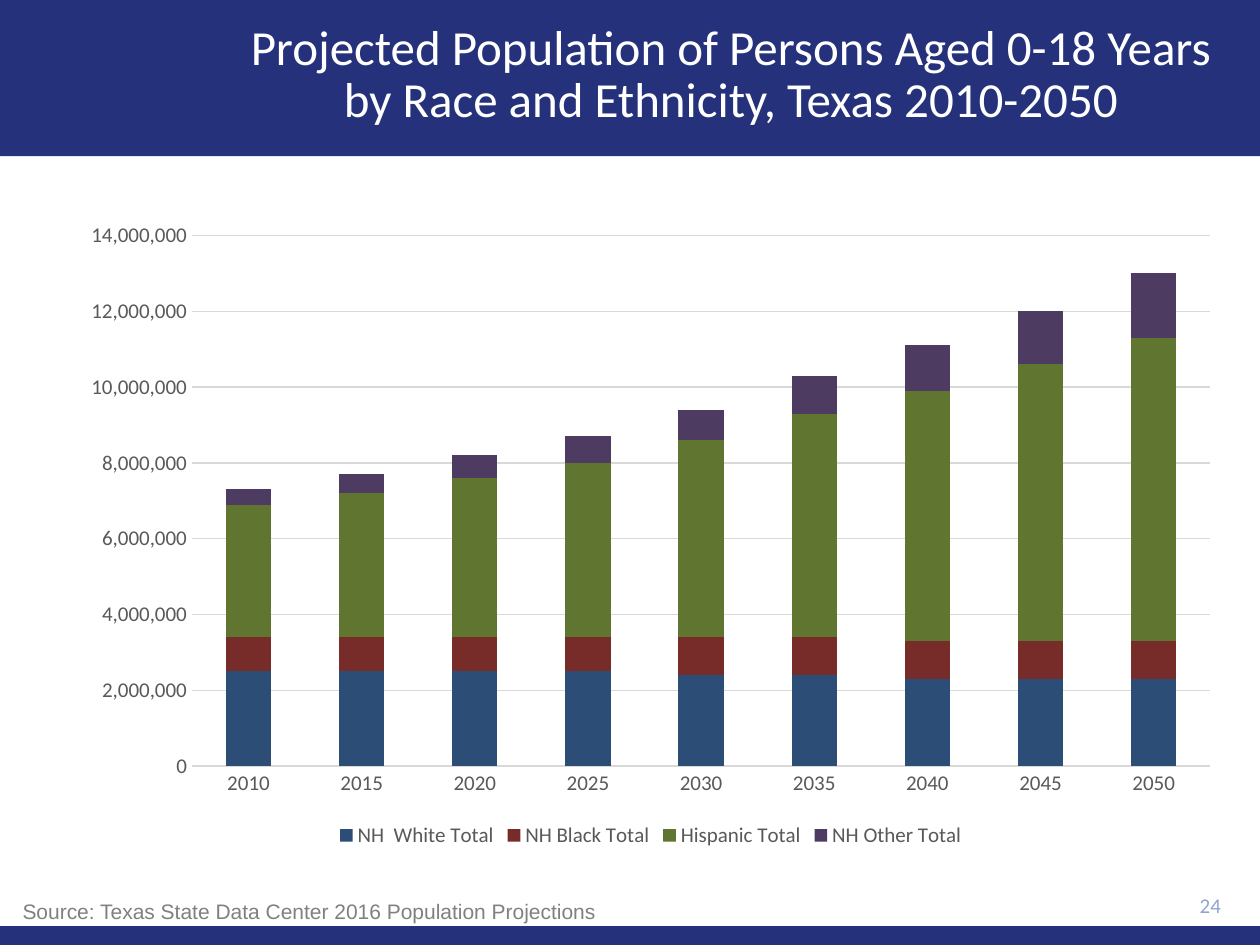
from pptx import Presentation
from pptx.chart import data as cd
from pptx.dml.color import RGBColor
from pptx.enum import chart as ch, shapes, text
from pptx.util import Pt

NAVY = RGBColor(0x25, 0x32, 0x7B)
WHITE = RGBColor(0xFF, 0xFF, 0xFF)
LABEL = RGBColor(0x59, 0x59, 0x59)
GRID = RGBColor(0xD9, 0xD9, 0xD9)
NUMBER = RGBColor(0x8F, 0xA5, 0xD1)
SOURCE = RGBColor(0x80, 0x80, 0x80)

YEARS = [str(year) for year in range(2010, 2051, 5)]
UNIT = 100_000
GROUPS = [
    ("NH  White Total", RGBColor(0x2C, 0x4D, 0x75), [25, 25, 25, 25, 24, 24, 23, 23, 23]),
    ("NH Black Total", RGBColor(0x77, 0x2C, 0x2A), [9, 9, 9, 9, 10, 10, 10, 10, 10]),
    ("Hispanic Total", RGBColor(0x5F, 0x75, 0x30), [35, 38, 42, 46, 52, 59, 66, 73, 80]),
    ("NH Other Total", RGBColor(0x4D, 0x3B, 0x62), [4, 5, 6, 7, 8, 10, 12, 14, 17]),
]


def style_font(font, size, color, name="Calibri"):
    """Set the size, colour and typeface of a font."""
    font.size, font.name = Pt(size), name
    font.color.rgb = color


def add_band(slide, left, top, width, height):
    """Draw a plain navy band."""
    band = slide.shapes.add_shape(
        shapes.MSO_SHAPE.RECTANGLE, Pt(left), Pt(top), Pt(width), Pt(height))
    band.shadow.inherit = False
    band.fill.solid()
    band.fill.fore_color.rgb = NAVY
    band.line.fill.background()


def add_header(slide, left, top, width, height):
    """Draw the header band and set the title in front of it."""
    add_band(slide, left, top, width, height)
    title = slide.shapes.title
    title.left, title.top = Pt(left + 122.4), Pt(top + 7.2)
    title.width, title.height = Pt(width - 129.6), Pt(72)
    title.element.getparent().append(title.element)
    frame = title.text_frame
    frame.text = ("Projected Population of Persons Aged 0-18 Years "
                  "by Race and Ethnicity, Texas 2010-2050")
    frame.vertical_anchor = text.MSO_ANCHOR.MIDDLE
    heading = frame.paragraphs[0]
    heading.alignment = text.PP_ALIGN.CENTER
    heading.line_spacing = 0.9
    style_font(heading.runs[0].font, 28, WHITE)


def add_population_chart(slide, left, top, width, height):
    """Draw the stacked columns of population by group."""
    population = cd.CategoryChartData(number_format="#,##0")
    population.categories = YEARS
    for name, _, counts in GROUPS:
        population.add_series(name, [count * UNIT for count in counts])
    chart = slide.shapes.add_chart(
        ch.XL_CHART_TYPE.COLUMN_STACKED,
        Pt(left), Pt(top), Pt(width), Pt(height), population).chart
    chart.has_title = False
    style_font(chart.font, 12, LABEL)

    columns = chart.plots[0]
    columns.gap_width, columns.overlap = 150, 100
    columns.vary_by_categories = False
    for series, (_, color, _) in zip(columns.series, GROUPS):
        series.format.fill.solid()
        series.format.fill.fore_color.rgb = color

    years, persons = chart.category_axis, chart.value_axis
    for axis in (years, persons):
        axis.major_tick_mark = axis.minor_tick_mark = ch.XL_TICK_MARK.NONE
        style_font(axis.tick_labels.font, 12, LABEL)
    persons.minimum_scale, persons.maximum_scale = 0, 14_000_000
    persons.major_unit = 2_000_000
    persons.tick_labels.number_format = "#,##0"
    persons.tick_labels.number_format_is_linked = False
    persons.format.line.fill.background()
    for line in (years.format.line, persons.major_gridlines.format.line):
        line.color.rgb = GRID
        line.width = Pt(0.75)

    chart.has_legend = True
    chart.legend.position = ch.XL_LEGEND_POSITION.BOTTOM
    chart.legend.include_in_layout = False
    style_font(chart.legend.font, 12, LABEL)


def add_note(slide, box, words, color, name, align, anchor):
    """Place one line of small text in a box."""
    frame = slide.shapes.add_textbox(*map(Pt, box)).text_frame
    frame.word_wrap = True
    frame.vertical_anchor = anchor
    frame.text = words
    frame.paragraphs[0].alignment = align
    style_font(frame.paragraphs[0].runs[0].font, 12, color, name)


def add_footer(slide, left, top, width, height):
    """Draw the footer band with the page number and source above it."""
    add_band(slide, left, top, width, height)
    add_note(slide, (left + 640.8, top - 24.5, 64, 24.5), "24", NUMBER, "Calibri",
             text.PP_ALIGN.RIGHT, text.MSO_ANCHOR.MIDDLE)
    add_note(slide, (left + 5.8, top - 19.4, 690, 21.6),
             "Source: Texas State Data Center 2016 Population Projections",
             SOURCE, "Arial", text.PP_ALIGN.LEFT, text.MSO_ANCHOR.TOP)


def main():
    """Build the slide and save it."""
    deck = Presentation()
    deck.slide_width, deck.slide_height = Pt(720), Pt(540)
    slide = deck.slides.add_slide(deck.slide_layouts.get_by_name("Title Only"))
    add_header(slide, 0, 0, 720, 89.3)
    add_population_chart(slide, 38.9, 120.2, 666, 367.2)
    add_footer(slide, 0, 529.2, 720, 10.8)
    deck.save("out.pptx")


if __name__ == "__main__":
    main()
